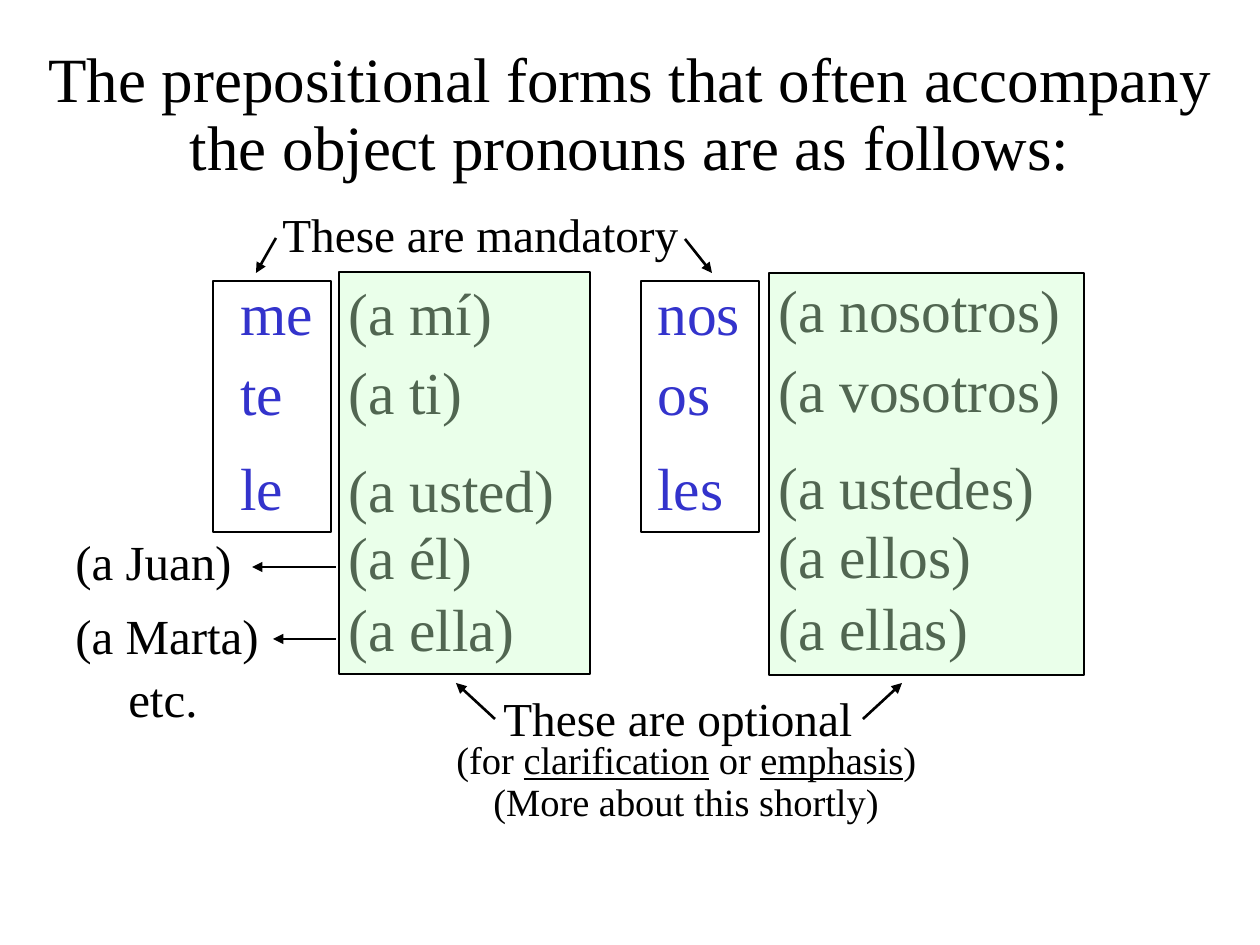
from lxml import etree
from pptx import Presentation
from pptx.dml.color import RGBColor
from pptx.enum.shapes import MSO_CONNECTOR, MSO_SHAPE
from pptx.enum.text import PP_ALIGN
from pptx.oxml.ns import qn
from pptx.util import Emu, Pt

COLORS = {"ink": "000000", "pronoun": "3333CC", "optional": "CCFFCC"}
SCALE = 914400 / 126


def px(*lengths):
    return [Emu(round(length * SCALE)) for length in lengths]


def write(runs, left, top, width, height, size, color="ink"):
    frame = slide.shapes.add_textbox(*px(left, top, width, height)).text_frame
    frame.word_wrap = True
    paragraph = frame.paragraphs[0]
    for words, underlined in runs:
        run = paragraph.add_run()
        run.text = words
        run.font.name = "Times New Roman"
        run.font.size = Pt(size)
        run.font.color.rgb = RGBColor.from_string(COLORS[color])
        if underlined:
            run.font.underline = True
    return paragraph


presentation = Presentation()
presentation.slide_width, presentation.slide_height = px(1260, 945)
slide = presentation.slides.add_slide(presentation.slide_layouts[6])

title = write(
    [("The prepositional forms that often accompany the object pronouns are as follows:", False)],
    21, 42, 1218, 147, 36,
)
title.alignment = PP_ALIGN.CENTER
title.line_spacing = 0.9

for left, pronouns in [(228, ["me", "te", "le"]), (645, ["nos", "os", "les"])]:
    for pronoun, top in zip(pronouns, [270, 350, 445]):
        write([(pronoun, False)], left, top, 147, 95, 34, "pronoun")

singular_forms = ["(a mí)", "(a ti)", "(a usted)", "(a él)", "(a ella)"]
plural_forms = ["(a nosotros)", "(a vosotros)", "(a ustedes)", "(a ellos)", "(a ellas)"]
for left, width, tops, forms in [
    (336, 273, [270, 349, 447, 514, 586], singular_forms),
    (766, 378, [267, 347, 444, 513, 585], plural_forms),
]:
    for form, top in zip(forms, tops):
        write([(form, False)], left, top, width, 84, 34)

emphasis_note = [
    ("(for ", False), ("clarification", True), (" or ", False), ("emphasis", True), (")", False),
]
for runs, left, top, width, height, size in [
    ([("These are mandatory", False)], 270, 199, 441, 69, 27),
    (emphasis_note, 444, 730, 567, 59, 22),
    ([("(a Juan)", False)], 63, 525, 199, 72, 28),
    ([("(a Marta)", False)], 63, 599, 252, 72, 28),
    ([("etc.", False)], 116, 662, 116, 72, 28),
    ([("(More about this shortly)", False)], 481, 772, 420, 59, 22),
    ([("These are optional", False)], 491, 683, 388, 69, 27),
]:
    write(runs, left, top, width, height, size)

for left, top, width, height, is_optional in [
    (213, 281, 118, 251, False),
    (641, 281, 118, 251, False),
    (339, 272, 251, 402, True),
    (769, 273, 315, 402, True),
]:
    frame_box = slide.shapes.add_shape(MSO_SHAPE.RECTANGLE, *px(left, top, width, height))
    frame_box.shadow.inherit = False
    frame_box.line.color.rgb = RGBColor.from_string(COLORS["ink"])
    frame_box.line.width = Pt(0.75)
    if is_optional:
        frame_box.fill.solid()
        frame_box.fill.fore_color.rgb = RGBColor.from_string(COLORS["optional"])
        tint = frame_box.fill._xPr.find(qn("a:solidFill")).find(qn("a:srgbClr"))
        etree.SubElement(tint, qn("a:alpha")).set("val", "40000")
    else:
        frame_box.fill.background()

for start_x, start_y, end_x, end_y, weight in [
    (276, 238, 256, 273, 1.5),
    (685, 239, 712, 273, 1.5),
    (336, 567, 252, 567, 0.75),
    (336, 639, 273, 639, 0.75),
    (495, 719, 456, 683, 1.5),
    (863, 719, 902, 683, 1.5),
]:
    arrow = slide.shapes.add_connector(
        MSO_CONNECTOR.STRAIGHT, *px(start_x, start_y, end_x, end_y)
    )
    arrow.line.color.rgb = RGBColor.from_string(COLORS["ink"])
    arrow.line.width = Pt(weight)
    etree.SubElement(arrow.line._get_or_add_ln(), qn("a:tailEnd")).set("type", "triangle")
    etree.SubElement(arrow._element.spPr, qn("a:effectLst"))

presentation.save("out.pptx")
